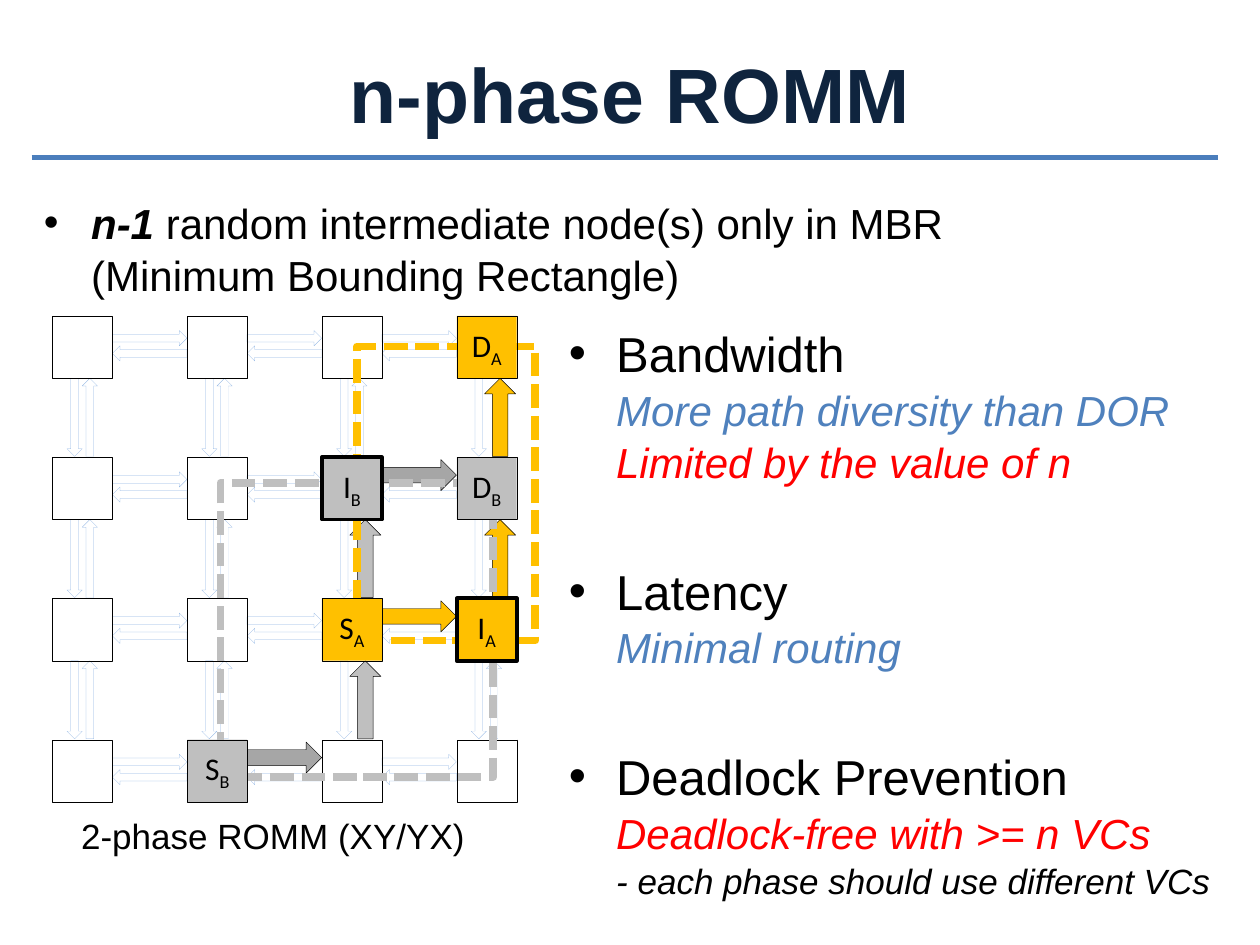
from collections import namedtuple
from itertools import product

from lxml import etree
from pptx import Presentation
from pptx.dml.color import RGBColor
from pptx.enum.dml import MSO_LINE
from pptx.enum.shapes import MSO_CONNECTOR, MSO_SHAPE as SHAPE
from pptx.enum.text import MSO_ANCHOR as ANCHOR, PP_ALIGN as ALIGN
from pptx.oxml.ns import qn
from pptx.util import Pt

NAVY = RGBColor(0x0F, 0x24, 0x3E)
RULE_BLUE = RGBColor(0x4B, 0x7E, 0xBC)
BLUE = RGBColor(0x4F, 0x81, 0xBD)
PALE_BLUE = RGBColor(0x8E, 0xB4, 0xE3)
RED = RGBColor(0xFF, 0x00, 0x00)
BLACK = RGBColor(0x00, 0x00, 0x00)
GOLD = RGBColor(0xFF, 0xC0, 0x00)
GRAY = RGBColor(0xBF, 0xBF, 0xBF)
DARK_GRAY = RGBColor(0xA6, 0xA6, 0xA6)

Piece = namedtuple("Piece", "text size color bold italic", defaults=(24, BLACK, False, False))

SIZE = 4
LEFT, TOP = 30, 180.6
STEP_X, STEP_Y = 77, 80.7
NODE_W, NODE_H = 34.2, 35.6
LINK_W, LINK_H = 42.6, 44.6
THIN, THICK = 8.8, 17.8

NODES = {
    (3, 0): ("D", "A", GOLD, 0.1),
    (2, 1): ("I", "B", GRAY, 2.25),
    (3, 1): ("D", "B", GRAY, 0.1),
    (2, 2): ("S", "A", GOLD, 0.1),
    (3, 2): ("I", "A", GOLD, 2.25),
    (1, 3): ("S", "B", GRAY, 0.1),
}
EAST_HOPS = {(1, 3): DARK_GRAY, (2, 1): DARK_GRAY, (2, 2): GOLD}
NORTH_HOPS = {(2, 1): GRAY, (2, 2): GRAY, (3, 0): GOLD, (3, 1): GOLD}


def add_shape(slide, kind, x, y, w, h, line, width, fill=None):
    sp = slide.shapes.add_shape(kind, Pt(x), Pt(y), Pt(w), Pt(h))
    sp.shadow.inherit = False
    if fill is None:
        sp.fill.background()
    else:
        sp.fill.solid()
        sp.fill.fore_color.rgb = fill
    sp.line.color.rgb = line
    sp.line.width = Pt(width)
    return sp


def add_pieces(p, pieces, font="Arial"):
    for piece in pieces:
        r = p.add_run()
        r.text = piece.text
        r.font.name = font
        r.font.size = Pt(piece.size)
        r.font.color.rgb = piece.color
        r.font.bold = piece.bold
        r.font.italic = piece.italic


def add_text(slide, x, y, w, h, anchor=ANCHOR.TOP):
    tf = slide.shapes.add_textbox(Pt(x), Pt(y), Pt(w), Pt(h)).text_frame
    tf.word_wrap = True
    tf.vertical_anchor = anchor
    return tf


def add_centered(tf, piece, before=0):
    p = tf.paragraphs[0]
    p.alignment = ALIGN.CENTER
    p.space_before = Pt(before)
    add_pieces(p, [piece])


def add_bullets(tf, items, gap=0):
    for i, lines in enumerate(items):
        p = tf.add_paragraph() if i else tf.paragraphs[0]
        p.space_before = Pt(gap if i else 2)
        p.line_spacing = 1.04
        pPr = p._p.get_or_add_pPr()
        pPr.set("marL", str(Pt(27)))
        pPr.set("indent", str(-Pt(27)))
        etree.SubElement(pPr, qn("a:buFont")).set("typeface", "Arial")
        etree.SubElement(pPr, qn("a:buChar")).set("char", "•")
        for j, pieces in enumerate(lines):
            if j:
                p.add_line_break()
            add_pieces(p, pieces)


def add_rule(slide):
    line = slide.shapes.add_connector(MSO_CONNECTOR.STRAIGHT, Pt(18), Pt(90), Pt(696), Pt(90))
    line.line.color.rgb = RULE_BLUE
    line.line.width = Pt(3)
    etree.SubElement(line._element.spPr, qn("a:effectLst"))


def add_arrow(slide, kind, cx, cy, length, thickness, rotation=0, fill=None):
    line, width = (PALE_BLUE, 0.1) if fill is None else (BLACK, 0.25)
    sp = add_shape(slide, kind, cx - length / 2, cy - thickness / 2,
                   length, thickness, line, width, fill)
    sp.rotation = rotation


def add_east_west(slide, col, row):
    cx = LEFT + col * STEP_X + NODE_W + LINK_W / 2
    y = TOP + row * STEP_Y
    add_arrow(slide, SHAPE.LEFT_ARROW, cx, y + 21.4, LINK_W, THIN)
    fill = EAST_HOPS.get((col, row))
    if fill is None:
        add_arrow(slide, SHAPE.RIGHT_ARROW, cx, y + 12.7, LINK_W, THIN)
    else:
        add_arrow(slide, SHAPE.RIGHT_ARROW, cx, y + 10.2, LINK_W, THICK, fill=fill)


def add_north_south(slide, col, row):
    x = LEFT + col * STEP_X
    cy = TOP + row * STEP_Y + NODE_H + LINK_H / 2
    add_arrow(slide, SHAPE.RIGHT_ARROW, x + 12.6, cy, LINK_H, THIN, 90)
    fill = NORTH_HOPS.get((col, row))
    if fill is None:
        add_arrow(slide, SHAPE.LEFT_ARROW, x + 21.3, cy, LINK_H, THIN, 90)
    else:
        add_arrow(slide, SHAPE.RIGHT_ARROW, x + 24.8, cy, LINK_H, THICK, 270, fill)


def add_node(slide, col, row, fill=None, width=0.1):
    return add_shape(slide, SHAPE.RECTANGLE, LEFT + col * STEP_X, TOP + row * STEP_Y,
                     NODE_W, NODE_H, BLACK, width, fill)


def add_labelled_node(slide, col, row, letter, packet, fill, width):
    tf = add_node(slide, col, row, fill, width).text_frame
    tf.margin_left = tf.margin_right = tf.margin_top = tf.margin_bottom = 0
    tf.word_wrap = False
    tf.vertical_anchor = ANCHOR.MIDDLE
    p = tf.paragraphs[0]
    p.alignment = ALIGN.CENTER
    add_pieces(p, [Piece(letter, 18), Piece(packet, 18)], "Calibri")
    p.runs[1]._r.get_or_add_rPr().set("baseline", "-25000")


def add_bounding_box(slide, x, y, w, h, color):
    sp = add_shape(slide, SHAPE.RECTANGLE, x, y, w, h, color, 4.5)
    sp.line.dash_style = MSO_LINE.SQUARE_DOT


def add_mesh(slide):
    for col, row in product(range(SIZE), repeat=2):
        if col < SIZE - 1:
            add_east_west(slide, col, row)
        if row < SIZE - 1:
            add_north_south(slide, col, row)
        if (col, row) not in NODES:
            add_node(slide, col, row)
    add_bounding_box(slide, 126, 276, 156, 168, GRAY)
    add_bounding_box(slide, 204, 198, 102, 168, GOLD)
    for (col, row), node in NODES.items():
        add_labelled_node(slide, col, row, *node)


def main():
    prs = Presentation()
    prs.slide_width, prs.slide_height = Pt(720), Pt(540)
    slide = prs.slides.add_slide(prs.slide_layouts[6])

    add_centered(add_text(slide, 36, 21.6, 648, 62.6, ANCHOR.MIDDLE),
                 Piece("n-phase ROMM", 44, NAVY, True))
    add_rule(slide)
    add_bullets(add_text(slide, 18, 108, 678, 60), [
        [[Piece("n-1", bold=True, italic=True),
          Piece(" random intermediate node(s) only in MBR")],
         [Piece("(Minimum Bounding Rectangle)")]],
    ])
    add_bullets(add_text(slide, 318, 180, 384, 288), [
        [[Piece("Bandwidth", 28)],
         [Piece("More path diversity than DOR", color=BLUE, italic=True)],
         [Piece("Limited by the value of n", color=RED, italic=True)]],
        [[Piece("Latency", 28)],
         [Piece("Minimal routing", color=BLUE, italic=True)]],
        [[Piece("Deadlock Prevention", 28)],
         [Piece("Deadlock-free with >= n VCs", color=RED, italic=True)],
         [Piece("- each phase should use different VCs", 20, italic=True)]],
    ], gap=41)
    add_centered(add_text(slide, 18, 462, 276, 60), Piece("2-phase ROMM (XY/YX)", 20), 2)
    add_mesh(slide)
    prs.save("out.pptx")


if __name__ == "__main__":
    main()
